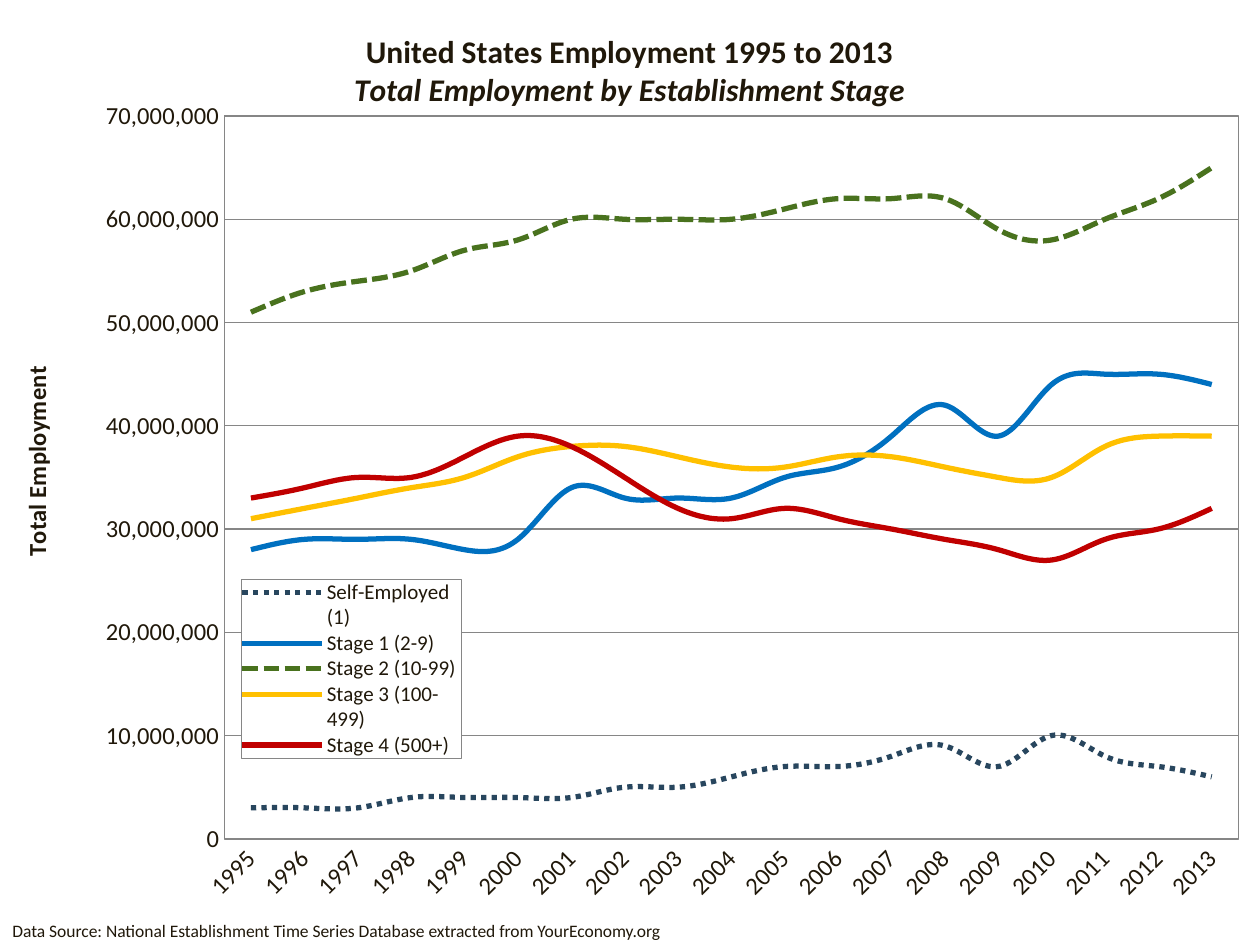
import dataclasses

import pptx
import pptx.chart.data
import pptx.dml.color
import pptx.enum.chart
import pptx.enum.dml
import pptx.oxml
import pptx.oxml.ns
import pptx.util

Pt = pptx.util.Pt
qn = pptx.oxml.ns.qn
Dash = pptx.enum.dml.MSO_LINE


@dataclasses.dataclass(frozen=True)
class Theme:
    font: str = "Calibri"
    ink: str = "20180A"
    paper: str = "FFFFFF"
    rule: str = "868686"
    title: int = 18
    axis: int = 14
    legend: int = 12
    note: int = 10
    curve: int = 3


THEME = Theme()
YEARS = [str(year) for year in range(1995, 2014)]
MILLION = 1_000_000

# name, colour, dash, employment in millions by year
STAGES = [
    ("Self-Employed (1) ", "28465E", Dash.ROUND_DOT,
     [3, 3, 3, 4, 4, 4, 4, 5, 5, 6, 7, 7, 8, 9, 7, 10, 8, 7, 6]),
    ("Stage 1 (2-9) ", "0070C0", None,
     [28, 29, 29, 29, 28, 29, 34, 33, 33, 33, 35, 36, 39, 42, 39, 44, 45, 45, 44]),
    ("Stage 2 (10-99) ", "49721E", Dash.SQUARE_DOT,
     [51, 53, 54, 55, 57, 58, 60, 60, 60, 60, 61, 62, 62, 62, 59, 58, 60, 62, 65]),
    ("Stage 3 (100-499) ", "FFC000", None,
     [31, 32, 33, 34, 35, 37, 38, 38, 37, 36, 36, 37, 37, 36, 35, 35, 38, 39, 39]),
    ("Stage 4 (500+) ", "C00000", None,
     [33, 34, 35, 35, 37, 39, 38, 35, 32, 31, 32, 31, 30, 29, 28, 27, 29, 30, 32]),
]


def rgb(colour):
    return pptx.dml.color.RGBColor.from_string(colour)


def style_font(font, size, bold=False, italic=False):
    font.name = THEME.font
    font.size = Pt(size)
    font.bold = bold
    font.italic = italic
    font.color.rgb = rgb(THEME.ink)


def write(paragraph, text, **style):
    run = paragraph.add_run()
    run.text = text
    style_font(run.font, **style)


def place(part, x, y, w=None, h=None, after=None):
    """Position a chart part by percentages of the chart area."""
    for old in part.findall(qn("c:layout")):
        part.remove(old)
    target = '<c:layoutTarget val="inner"/>' if after is None else ""
    modes = '<c:xMode val="edge"/><c:yMode val="edge"/>'
    sides = {"x": x, "y": y, "w": w, "h": h}
    body = "".join(f'<c:{side} val="{percent / 100:.4f}"/>'
                   for side, percent in sides.items() if percent is not None)
    layout = pptx.oxml.parse_xml(
        f'<c:layout {pptx.oxml.ns.nsdecls("c")}><c:manualLayout>{target}{modes}{body}'
        "</c:manualLayout></c:layout>")
    if after is None:
        part.insert(0, layout)
    else:
        part.find(qn(after)).addnext(layout)


def paint_behind(previous, outlined=True):
    """Add a paper fill and optional outline after the given chart element."""
    stroke = f'<a:solidFill><a:srgbClr val="{THEME.rule}"/></a:solidFill>' if outlined else "<a:noFill/>"
    previous.addnext(pptx.oxml.parse_xml(
        f'<c:spPr {pptx.oxml.ns.nsdecls("c", "a")}><a:solidFill><a:srgbClr val="{THEME.paper}"/>'
        f'</a:solidFill><a:ln w="9525">{stroke}</a:ln></c:spPr>'))


def style_axis(axis):
    axis.major_tick_mark = axis.minor_tick_mark = pptx.enum.chart.XL_TICK_MARK.NONE
    axis.format.line.color.rgb = rgb(THEME.rule)
    style_font(axis.tick_labels.font, THEME.axis)


def style_axes(chart):
    years, employment = chart.category_axis, chart.value_axis
    style_axis(years)
    years._element.find(qn("c:txPr")).find(qn("a:bodyPr")).set("rot", "-2700000")
    style_axis(employment)
    employment.minimum_scale, employment.maximum_scale = 0, 70 * MILLION
    employment.major_unit = 10 * MILLION
    employment.tick_labels.number_format = "#,##0"
    employment.tick_labels.number_format_is_linked = False
    employment.major_gridlines.format.line.color.rgb = rgb(THEME.rule)
    heading = employment.axis_title
    write(heading.text_frame.paragraphs[0], "Total Employment", size=THEME.axis, bold=True)
    heading.text_frame._txBody.find(qn("a:bodyPr")).set("rot", "-5400000")
    place(heading._element, 1.2, 38.1, after="c:tx")


def add_title(chart):
    frame = chart.chart_title.text_frame
    write(frame.paragraphs[0], "United States Employment 1995 to 2013", size=THEME.title, bold=True)
    write(frame.add_paragraph(), "Total Employment by Establishment Stage",
          size=THEME.title, bold=True, italic=True)
    place(chart.chart_title._element, 27.8, 2.65, after="c:tx")


def add_legend(chart):
    chart.has_legend = True
    legend = chart.legend
    legend.position = pptx.enum.chart.XL_LEGEND_POSITION.RIGHT
    legend.include_in_layout = False
    style_font(legend.font, THEME.legend)
    box = legend._element
    place(box, 19.15, 61.15, 17.5, 18.9, after="c:legendPos")
    paint_behind(box.find(qn("c:overlay")))


def add_employment_chart(slide):
    data = pptx.chart.data.CategoryChartData(number_format="#,##0")
    data.categories = YEARS
    for name, _, _, millions in STAGES:
        data.add_series(name, [value * MILLION for value in millions])
    chart = slide.shapes.add_chart(
        pptx.enum.chart.XL_CHART_TYPE.LINE, Pt(0), Pt(1), Pt(720), Pt(540), data).chart
    style_font(chart.font, THEME.note)
    for series, (_, colour, dash, _) in zip(chart.plots[0].series, STAGES):
        series.smooth = True
        series.marker.style = pptx.enum.chart.XL_MARKER_STYLE.NONE
        line = series.format.line
        line.color.rgb = rgb(colour)
        line.width = Pt(THEME.curve)
        if dash is not None:
            line.dash_style = dash
    style_axes(chart)
    add_title(chart)
    add_legend(chart)
    root = chart._chartSpace.find(qn("c:chart"))
    plot_area = root.find(qn("c:plotArea"))
    place(plot_area, 17.8, 12.1, 80.5, 76.5)
    paint_behind(plot_area[-1])
    paint_behind(root, outlined=False)


def add_source_note(slide):
    frame = slide.shapes.add_textbox(Pt(0), Pt(522), Pt(552), Pt(19.4)).text_frame
    frame.word_wrap = True
    write(frame.paragraphs[0],
          "Data Source: National Establishment Time Series Database extracted from YourEconomy.org",
          size=THEME.note)


def main():
    deck = pptx.Presentation()
    deck.slide_width, deck.slide_height = Pt(720), Pt(540)
    slide = deck.slides.add_slide(deck.slide_layouts[6])
    add_employment_chart(slide)
    add_source_note(slide)
    deck.save("out.pptx")


if __name__ == "__main__":
    main()
